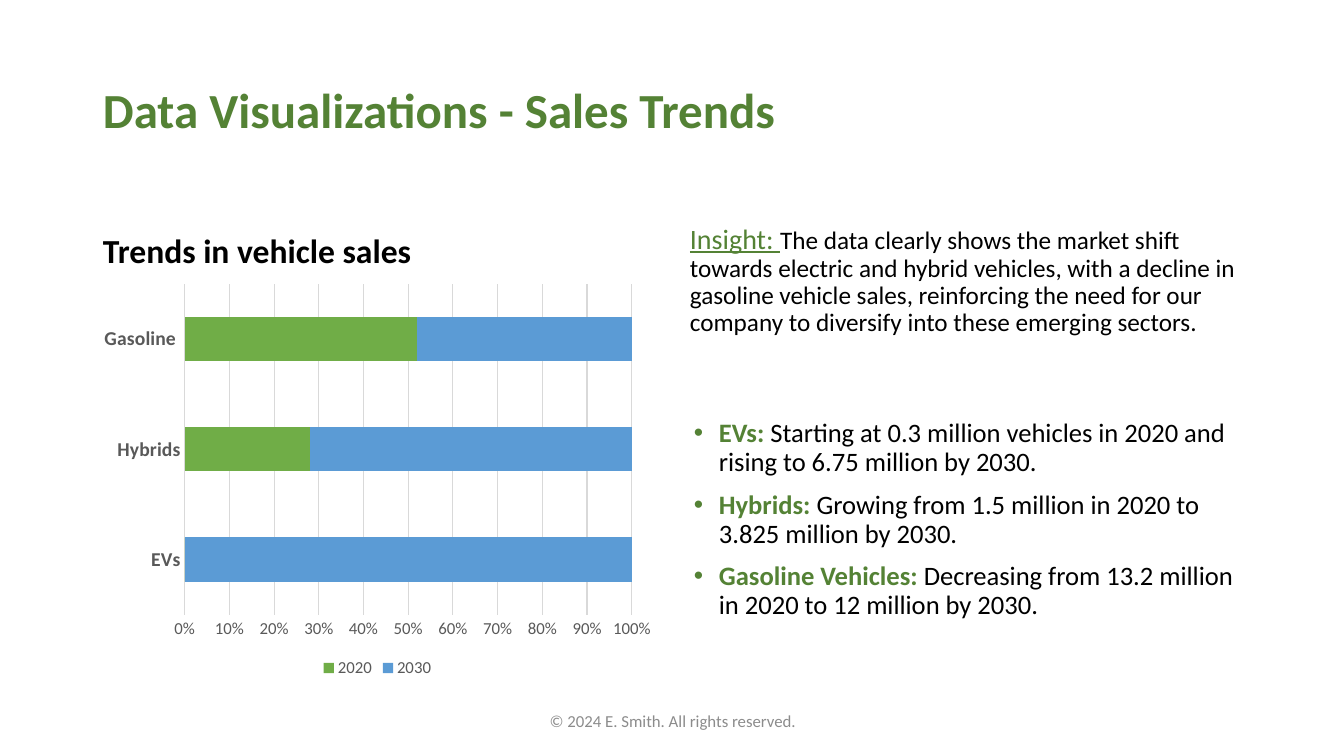
from lxml import etree
from pptx import Presentation
from pptx.chart.data import CategoryChartData
from pptx.dml.color import RGBColor
from pptx.enum.chart import XL_CHART_TYPE, XL_LEGEND_POSITION, XL_TICK_MARK
from pptx.enum.text import MSO_ANCHOR, PP_ALIGN
from pptx.oxml.ns import qn
from pptx.util import Pt

PX = 914400 / 100.8
FONT = "Calibri"
GREEN, BLACK, GREY, RULE = "548235", "000000", "595959", "D9D9D9"
STACKED_100 = XL_CHART_TYPE.BAR_STACKED_100
LEGEND_BOTTOM = XL_LEGEND_POSITION.BOTTOM
NO_TICK = XL_TICK_MARK.NONE
TOP, MIDDLE, BOTTOM = MSO_ANCHOR.TOP, MSO_ANCHOR.MIDDLE, MSO_ANCHOR.BOTTOM
CENTER = PP_ALIGN.CENTER


def px(n):
    return round(n * PX)


def rgb(hex_color):
    return RGBColor.from_string(hex_color)


def set_font(font, size, color, bold=False, underline=None):
    font.name = FONT
    font.size = Pt(size)
    font.bold = bold
    font.color.rgb = rgb(color)
    if underline is not None:
        font.underline = underline


def add_text_box(slide, x, y, w, h, anchor=TOP):
    tf = slide.shapes.add_textbox(px(x), px(y), px(w), px(h)).text_frame
    tf.word_wrap = True
    tf.vertical_anchor = anchor
    return tf


def add_run(p, text, size, color, bold=False, underline=False):
    r = p.add_run()
    r.text = text
    set_font(r.font, size, color, bold, underline)


def add_text(slide, box, text, size, color, bold=False, anchor=MIDDLE,
             align=None, spacing=0.9):
    p = add_text_box(slide, *box, anchor=anchor).paragraphs[0]
    p.alignment = align
    p.line_spacing = spacing
    add_run(p, text, size, color, bold)


def add_bullet(p):
    pPr = p._p.get_or_add_pPr()
    pPr.set("marL", str(px(25)))
    pPr.set("indent", str(-px(25)))
    font = etree.SubElement(pPr, qn("a:buFont"))
    font.set("typeface", "Arial")
    char = etree.SubElement(pPr, qn("a:buChar"))
    char.set("char", "•")


def add_insight(slide, box, label, text):
    p = add_text_box(slide, *box, anchor=BOTTOM).paragraphs[0]
    p.line_spacing = 0.9
    add_run(p, label, 20, GREEN, underline=True)
    add_run(p, text, 18, BLACK)


def add_bullets(slide, box, items):
    tf = add_text_box(slide, *box)
    for i, (label, text) in enumerate(items):
        p = tf.add_paragraph() if i else tf.paragraphs[0]
        add_bullet(p)
        p.line_spacing = 0.9
        if i:
            p.space_before = Pt(10)
        add_run(p, label, 19, GREEN, bold=True)
        add_run(p, text, 19, BLACK)


def style_axis(axis, size, bold=False):
    axis.major_tick_mark = NO_TICK
    axis.minor_tick_mark = NO_TICK
    set_font(axis.tick_labels.font, size, GREY, bold)


def style_rule(line):
    line.color.rgb = rgb(RULE)
    line.width = Pt(0.75)


def add_sales_chart(slide, box, categories, series):
    data = CategoryChartData()
    data.categories = categories
    for name, values, _ in series:
        data.add_series(name, values)
    frame = slide.shapes.add_chart(STACKED_100, *map(px, box), data)
    chart = frame.chart
    chart.has_title = False
    set_font(chart.font, 10, BLACK)

    # Bars
    plot = chart.plots[0]
    plot.gap_width, plot.overlap = 150, 100
    plot.vary_by_categories = False
    for bars, (_, _, color) in zip(plot.series, series):
        bars.format.fill.solid()
        bars.format.fill.fore_color.rgb = rgb(color)

    # Axes
    cat, val = chart.category_axis, chart.value_axis
    style_axis(cat, 14, bold=True)
    style_rule(cat.format.line)
    style_axis(val, 12)
    val.format.line.fill.background()
    val.has_major_gridlines = True
    style_rule(val.major_gridlines.format.line)
    val.tick_labels.number_format = "0%"
    val.tick_labels.number_format_is_linked = False

    # Legend
    chart.has_legend = True
    chart.legend.position = LEGEND_BOTTOM
    chart.legend.include_in_layout = False
    set_font(chart.legend.font, 12, GREY)


def main():
    prs = Presentation()
    prs.slide_width, prs.slide_height = px(1344), px(756)
    slide = prs.slides.add_slide(prs.slide_layouts[6])

    # Title
    add_text(slide, (93, 40, 1159, 146), "Data Visualizations - Sales Trends",
             35, GREEN, bold=True)

    # Left: chart with its heading
    add_text(slide, (93, 185, 569, 91), "Trends in vehicle sales",
             24, BLACK, bold=True, anchor=BOTTOM)
    add_sales_chart(slide, (93, 276, 569, 406),
                    ["EVs", "Hybrids", "Gasoline "],
                    [("2020", (0, 28, 52), "70AD47"),
                     ("2030", (100, 72, 48), "5B9BD5")])

    # Right: insight and details
    add_insight(slide, (680, 164, 572, 178), "Insight: ",
                "The data clearly shows the market shift towards electric and "
                "hybrid vehicles, with a decline in gasoline vehicle sales, "
                "reinforcing the need for our company to diversify into these "
                "emerging sectors.")
    add_bullets(slide, (684, 415, 572, 340), [
        ("EVs: ", "Starting at 0.3 million vehicles in 2020 and rising to "
                  "6.75 million by 2030."),
        ("Hybrids: ", "Growing from 1.5 million in 2020 to 3.825 million "
                      "by 2030."),
        ("Gasoline Vehicles: ", "Decreasing from 13.2 million in 2020 to "
                                "12 million by 2030."),
    ])

    # Footer
    add_text(slide, (446, 701, 454, 40),
             "© 2024 E. Smith. All rights reserved.", 12, "8C8C8C",
             align=CENTER, spacing=1.0)

    prs.save("out.pptx")


if __name__ == "__main__":
    main()
